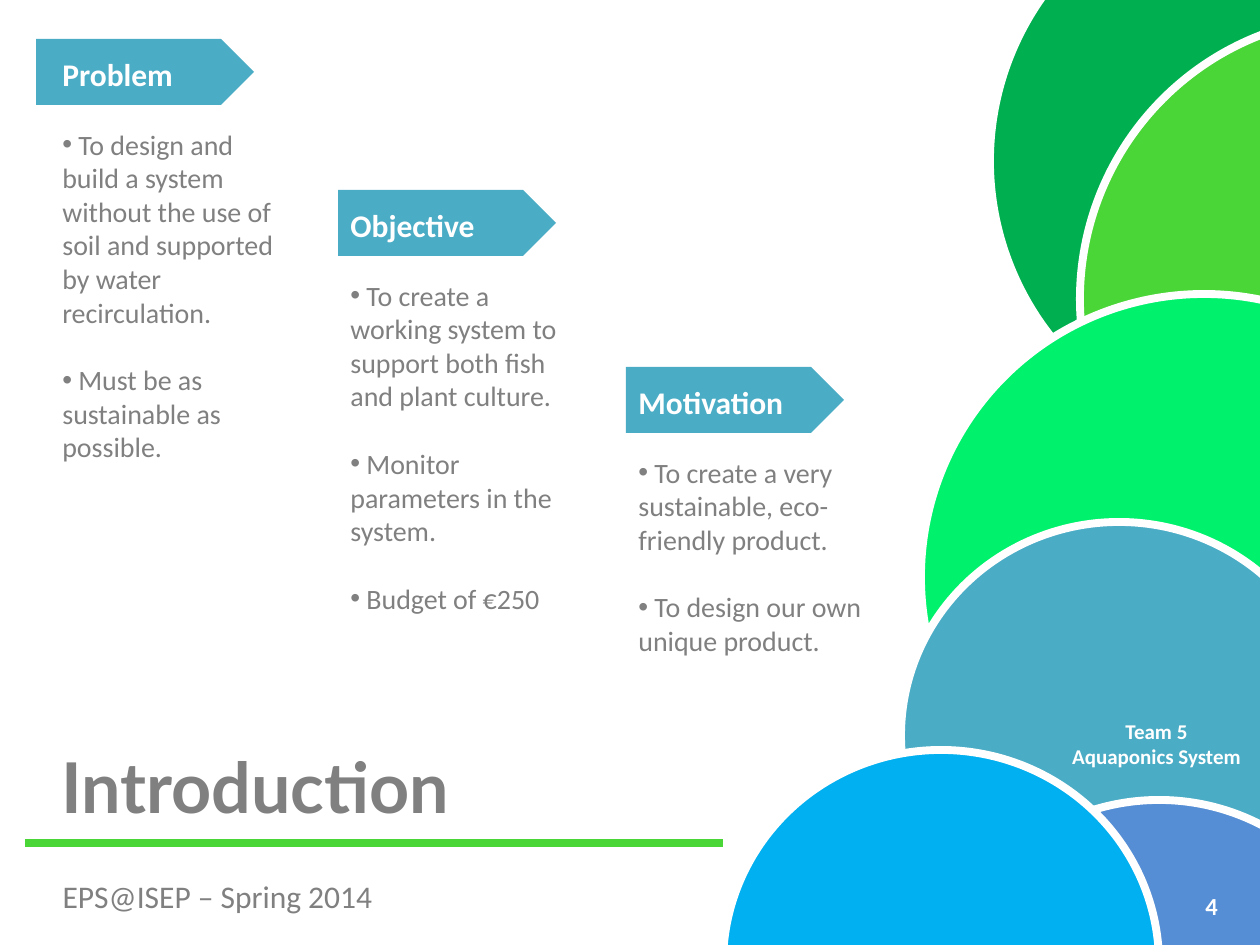
from lxml.etree import SubElement
from pptx import Presentation
from pptx.dml.color import RGBColor
from pptx.enum.shapes import MSO_CONNECTOR, MSO_SHAPE
from pptx.enum.text import MSO_ANCHOR, MSO_AUTO_SIZE, PP_ALIGN
from pptx.oxml.ns import qn
from pptx.util import Emu, Pt

COLORS = {
    "white": "FFFFFF", "gray": "808080", "forest": "00B050", "lime": "49D636",
    "mint": "00F26D", "teal": "4BACC6", "slate": "558ED5", "sky": "00B0F0",
}
EMU_PER_PX = 914400 / 126


def px(*lengths):
    return [Emu(round(length * EMU_PER_PX)) for length in lengths]


def rgb(color):
    return RGBColor.from_string(COLORS[color])


class SlideBuilder:
    """Holds the text style and the slide that elements are added to."""

    def __init__(self, slide, font="Calibri"):
        self.slide = slide
        self.font = font

    def rule(self, left, right, y, color, weight):
        line = self.slide.shapes.add_connector(
            MSO_CONNECTOR.STRAIGHT, *px(left, y, right, y))
        line.line.color.rgb = rgb(color)
        line.line.width = Pt(weight)
        SubElement(line._element.spPr, qn("a:effectLst"))

    def shape(self, kind, box, fill, outline=None):
        shape = self.slide.shapes.add_shape(kind, *px(*box))
        shape.shadow.inherit = False
        shape.fill.solid()
        shape.fill.fore_color.rgb = rgb(fill)
        if outline:
            shape.line.color.rgb = rgb(outline)
            shape.line.width = Pt(4.5)
        else:
            shape.line.fill.background()

    def paragraph(self, paragraph, text, size, color, bold=False, font=None):
        paragraph.text = text
        paragraph.font.name = font or self.font
        paragraph.font.size = Pt(size)
        paragraph.font.bold = bold
        paragraph.font.color.rgb = rgb(color)

    def text(self, box, lines, size, color, bold=False, font=None,
             align=PP_ALIGN.LEFT, anchor=MSO_ANCHOR.TOP):
        frame = self.slide.shapes.add_textbox(*px(*box)).text_frame
        frame.word_wrap = True
        frame.vertical_anchor = anchor
        if anchor == MSO_ANCHOR.TOP:
            frame.auto_size = MSO_AUTO_SIZE.SHAPE_TO_FIT_TEXT
        for index, line in enumerate(lines):
            paragraph = frame.add_paragraph() if index else frame.paragraphs[0]
            paragraph.alignment = align
            self.paragraph(paragraph, line, size, color, bold, font)
        return frame

    def column(self, left, top, text_left, width, height, heading, points):
        self.shape(MSO_SHAPE.PENTAGON, (left, top, 218, 66), "teal")
        frame = self.text((text_left, top + 10, width, height), [heading],
                          18, "white", bold=True)
        for point in points:
            paragraph = frame.add_paragraph()
            paragraph.space_before = Pt(19.5)
            properties = paragraph._p.get_or_add_pPr()
            SubElement(properties, qn("a:buFont"), typeface="Arial")
            SubElement(properties, qn("a:buChar"), char="•")
            self.paragraph(paragraph, f" {point}", 16, "gray")


def main():
    deck = Presentation()
    deck.slide_width, deck.slide_height = px(1260, 945)
    builder = SlideBuilder(deck.slides.add_slide(deck.slide_layouts[6]))

    builder.rule(25, 723, 843, "lime", 4.5)
    large, small = (566, 566), (436, 427)
    circles = [
        (990, -122, large, "forest"), (1080, 16, large, "lime"),
        (921, 294, large, "mint"), (901, 522, small, "teal"),
        (941, 800, small, "slate"), (723, 750, small, "sky"),
    ]
    for left, top, size, fill in circles:
        builder.shape(MSO_SHAPE.OVAL, (left, top, *size), fill, "white")

    builder.text((1193, 881, 294, 50), ["4"], 14, "white", bold=True,
                 anchor=MSO_ANCHOR.MIDDLE)
    builder.text((1019, 712, 275, 63), ["Team 5", "Aquaponics System"],
                 12, "white", bold=True, align=PP_ALIGN.CENTER)
    builder.text((-100, 871, 635, 50), ["EPS@ISEP – Spring 2014"],
                 18, "gray", align=PP_ALIGN.CENTER)
    builder.text((49, 737, 886, 97), ["Introduction"], 40, "gray",
                 bold=True, font="Lato")

    columns = [
        (36, 39, 50, 239, 459, "Problem", [
            "To design and build a system without the use of soil and "
            "supported by water recirculation.",
            "Must be as sustainable as possible."]),
        (338, 190, 338, 234, 491, "Objective", [
            "To create a working system to support both fish and plant culture.",
            "Monitor parameters in the system.",
            "Budget of €250"]),
        (626, 367, 626, 258, 357, "Motivation", [
            "To create a very sustainable, eco-friendly product.",
            "To design our own unique product."]),
    ]
    for column in columns:
        builder.column(*column)

    deck.save("out.pptx")


if __name__ == "__main__":
    main()
